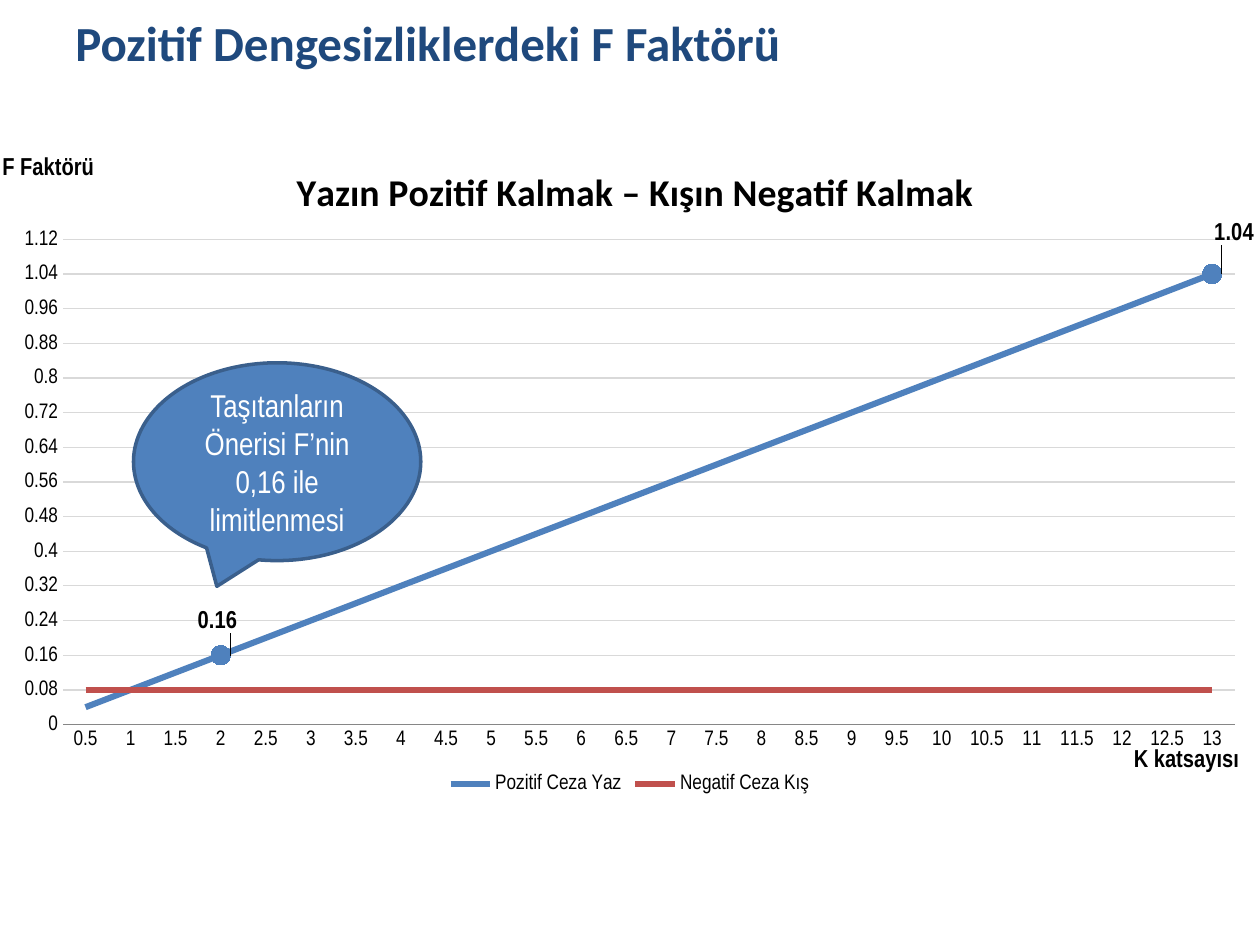
import pptx
import pptx.chart.data
import pptx.dml.color
import pptx.enum.chart
import pptx.enum.shapes
import pptx.enum.text
import pptx.oxml
import pptx.oxml.ns
import pptx.util

COLORS = {"title": "1F497D", "text": "000000", "white": "FFFFFF", "grid": "D9D9D9",
          "axis": "868686", "summer": "4F81BD", "winter": "C0504D", "callout_line": "3A5F8C"}
HEADING, NARROW = "Calibri", "Arial Narrow"

# text, (left, top, width, height), font, size, colour
TEXTS = [
    ("Pozitif Dengesizliklerdeki F Faktörü", (0.5, 0.05, 9, 1.25), HEADING, 28, "title"),
    ("F Faktörü", (-0.08, 1.15, 1.46, 0.34), NARROW, 14, "text"),
    ("K katsayısı", (8.9, 5.85, 1.1, 0.34), NARROW, 14, "text"),
]
CALLOUT = "Taşıtanların Önerisi F’nin 0,16 ile limitlenmesi"
CHART_TITLE = "Yazın Pozitif Kalmak – Kışın Negatif Kalmak"
UNIT = 0.08  # F factor for each unit of K
K_VALUES = [step / 2 for step in range(1, 27)]
SERIES = [
    ("Pozitif Ceza Yaz", [round(UNIT * k, 2) for k in K_VALUES], "summer"),
    ("Negatif Ceza Kış", [UNIT] * len(K_VALUES), "winter"),
]
# K of each marked point: label shift as shares of the chart
MARKED = {2: (-0.03, -0.05), 13: (-0.01, -0.06)}


def color(name):
    return pptx.dml.color.RGBColor.from_string(COLORS[name])


def inches(lengths):
    return [pptx.util.Inches(length) for length in lengths]


def set_font(font, name, size, ink="text", bold=False):
    font.name, font.size, font.bold = name, pptx.util.Pt(size), bold
    font.color.rgb = color(ink)


def set_line(line, ink, width):
    line.color.rgb, line.width = color(ink), pptx.util.Pt(width)


def manual_layout(parent, index, shares, inner=False):
    """Place a chart part by shares of the chart: x, y and optionally w, h."""
    for old in parent.findall(pptx.oxml.ns.qn("c:layout")):
        parent.remove(old)
    settings = [("layoutTarget", "inner")] if inner else []
    if parent.tag != pptx.oxml.ns.qn("c:dLbl"):
        settings += [("xMode", "edge"), ("yMode", "edge")]
    settings += list(zip("xywh", shares))
    body = "".join(f'<c:{tag} val="{value}"/>' for tag, value in settings)
    parent.insert(index, pptx.oxml.parse_xml(
        f'<c:layout {pptx.oxml.ns.nsdecls("c")}><c:manualLayout>{body}</c:manualLayout></c:layout>'))


def add_text(slide, text, place, font, size, ink):
    box = slide.shapes.add_textbox(*inches(place))
    box.text_frame.word_wrap = True
    para = box.text_frame.paragraphs[0]
    para.text = text
    set_font(para.font, font, size, ink, bold=True)


def style_axes(chart):
    for axis in (chart.category_axis, chart.value_axis):
        axis.major_tick_mark = axis.minor_tick_mark = pptx.enum.chart.XL_TICK_MARK.NONE
        set_font(axis.tick_labels.font, NARROW, 12)
    set_line(chart.category_axis.format.line, "axis", 1)
    values = chart.value_axis
    values.minimum_scale, values.maximum_scale, values.major_unit = 0, 14 * UNIT, UNIT
    values.format.line.fill.background()
    set_line(values.major_gridlines.format.line, "grid", 0.75)


def mark_point(series, k, ink):
    point = series.points[K_VALUES.index(k)]
    set_line(point.format.line, ink, 3.5)
    point.marker.style = pptx.enum.chart.XL_MARKER_STYLE.CIRCLE
    point.marker.size = 11
    point.marker.format.fill.solid()
    point.marker.format.fill.fore_color.rgb = color(ink)
    point.marker.format.line.color.rgb = color(ink)
    set_font(point.data_label.font, NARROW, 14, bold=True)
    point.data_label.position = pptx.enum.chart.XL_LABEL_POSITION.RIGHT


def add_chart(slide):
    data = pptx.chart.data.CategoryChartData()
    data.categories = [f"{k:g}" for k in K_VALUES]
    for name, values, _ in SERIES:
        data.add_series(name, values)
    chart = slide.shapes.add_chart(
        pptx.enum.chart.XL_CHART_TYPE.LINE, *inches((0, 0.99, 10, 5.35)), data).chart
    set_font(chart.font, HEADING, 18)
    chart.plots[0].vary_by_categories = False

    chart.has_title = True
    para = chart.chart_title.text_frame.paragraphs[0]
    para.text = CHART_TITLE
    set_font(para.font, HEADING, 21.6, bold=True)
    chart.has_legend = True
    chart.legend.position = pptx.enum.chart.XL_LEGEND_POSITION.BOTTOM
    chart.legend.include_in_layout = False
    set_font(chart.legend.font, NARROW, 12)
    style_axes(chart)

    for series, (_, _, ink) in zip(chart.plots[0].series, SERIES):
        series.smooth = False
        series.marker.style = pptx.enum.chart.XL_MARKER_STYLE.NONE
        set_line(series.format.line, ink, 3.5)
    for k in MARKED:
        mark_point(chart.plots[0].series[0], k, SERIES[0][2])

    root = chart.element if hasattr(chart, "element") else chart._chartSpace
    manual_layout(root.xpath(".//c:plotArea")[0], 0, (0.05, 0.17, 0.93, 0.72), inner=True)
    manual_layout(root.xpath("./c:chart/c:title")[0], 1, (0.23, 0.05))
    for label, shift in zip(root.xpath(".//c:dLbl"), MARKED.values()):
        manual_layout(label, 1, shift)


def add_callout(slide):
    callout = slide.shapes.add_shape(
        pptx.enum.shapes.MSO_SHAPE.OVAL_CALLOUT, *inches((1.06, 2.88, 2.28, 1.57)))
    callout.adjustments[0], callout.adjustments[1] = -0.21, 0.63
    callout.shadow.inherit = False
    callout.fill.solid()
    callout.fill.fore_color.rgb = color("summer")
    set_line(callout.line, "callout_line", 2)
    frame = callout.text_frame
    frame.word_wrap = True
    frame.vertical_anchor = pptx.enum.text.MSO_ANCHOR.MIDDLE
    para = frame.paragraphs[0]
    para.text = CALLOUT
    para.alignment = pptx.enum.text.PP_ALIGN.CENTER
    set_font(para.font, NARROW, 18, "white")


def main():
    deck = pptx.Presentation()
    deck.slide_width, deck.slide_height = inches((10, 7.5))
    slide = deck.slides.add_slide(deck.slide_layouts[6])
    add_chart(slide)
    add_callout(slide)
    for item in TEXTS:
        add_text(slide, *item)
    deck.save("out.pptx")


if __name__ == "__main__":
    main()
